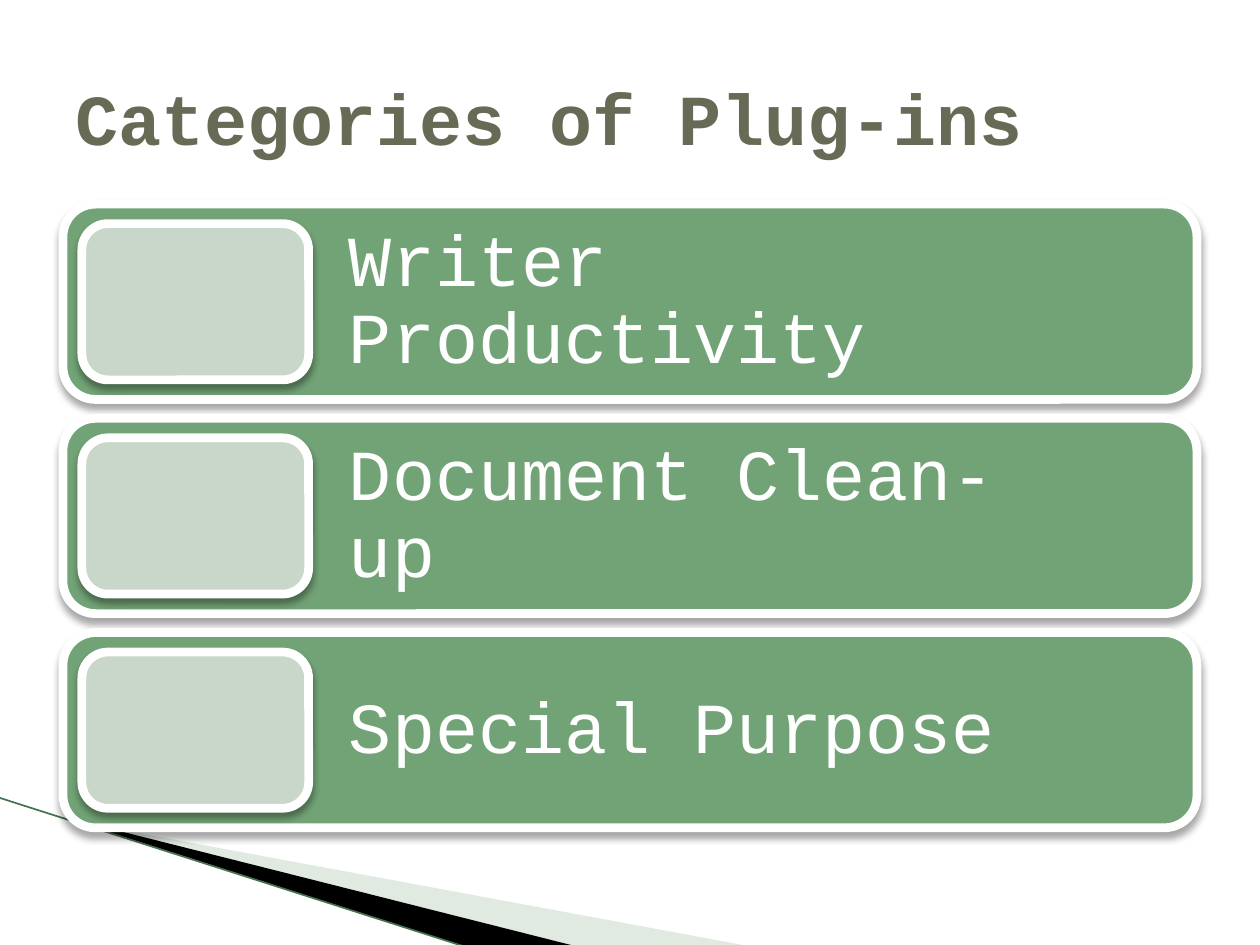
"""Build the slide on the categories of plug-ins."""
import lxml.etree
import pptx
import pptx.dml.color
import pptx.enum.shapes
import pptx.enum.text
import pptx.oxml
import pptx.oxml.ns
import pptx.util
from pptx.util import Inches

qn = pptx.oxml.ns.qn


def color(value):
    return pptx.dml.color.RGBColor.from_string(value)


def write(frame, text, ink, bold=False, spacing=1.0, inset=(0.1, 0.05)):
    frame.word_wrap = True
    frame.auto_size = pptx.enum.text.MSO_AUTO_SIZE.NONE
    frame.vertical_anchor = pptx.enum.text.MSO_ANCHOR.MIDDLE
    frame.margin_left = frame.margin_right = Inches(inset[0])
    frame.margin_top = frame.margin_bottom = Inches(inset[1])
    paragraph = frame.paragraphs[0]
    paragraph.alignment = pptx.enum.text.PP_ALIGN.LEFT
    paragraph.line_spacing = spacing
    run = paragraph.add_run()
    run.text = text
    run.font.name = "Courier New"
    run.font.size = pptx.util.Pt(41)
    run.font.bold = bold
    run.font.color.rgb = color(ink)


deck = pptx.Presentation()
deck.slide_width, deck.slide_height = Inches(10), Inches(7.5)
slide = deck.slides.add_slide(deck.slide_layouts[5])
shapes = slide.shapes

wedges = [
    ("B3CBB5", 40, [(0.55, 6.51), (5.95, 7.51), (4.56, 7.51), (0.55, 6.5)]),
    ("000000", 100, [(0.53, 6.49), (4.57, 7.51), (3.72, 7.52), (0.54, 6.5)]),
]
for fill, opacity, points in wedges:
    corners = [(Inches(x), Inches(y)) for x, y in points]
    builder = shapes.build_freeform(*corners[0])
    builder.add_line_segments(corners[1:], close=True)
    wedge = builder.convert_to_shape()
    wedge.shadow.inherit = False
    wedge.fill.solid()
    wedge.fill.fore_color.rgb = color(fill)
    wedge.line.fill.background()
    if opacity < 100:
        tint = wedge.fill._xPr.find(qn("a:solidFill"))[0]
        lxml.etree.SubElement(tint, qn("a:alpha"), val=str(opacity * 1000))

edge = shapes.add_connector(
    pptx.enum.shapes.MSO_CONNECTOR.STRAIGHT,
    Inches(-0.01), Inches(6.33), Inches(3.71), Inches(7.52))
edge.line.color.rgb = color("47704C")
edge.line.width = pptx.util.Pt(0.95)
lxml.etree.SubElement(edge._element.spPr, qn("a:effectLst"))

categories = ["Writer Productivity", "Document Clean-up", "Special Purpose"]
for row, category in enumerate(categories):
    top = 1.62 + 1.7 * row
    panels = [
        ("72A376", 0.5, top, 9, 1.55),
        ("C9D7CA", 0.65, top + 0.155, 1.8, 1.24),
    ]
    for fill, *place in panels:
        panel = shapes.add_shape(
            pptx.enum.shapes.MSO_SHAPE.ROUNDED_RECTANGLE,
            *[Inches(length) for length in place])
        panel.fill.solid()
        panel.fill.fore_color.rgb = color(fill)
        panel.line.color.rgb = color("FFFFFF")
        panel.line.width = pptx.util.Pt(5)
        panel.shadow.inherit = False
        effects = panel._element.spPr.find(qn("a:effectLst"))
        shadow = lxml.etree.SubElement(
            effects, qn("a:outerShdw"), blurRad=str(pptx.util.Pt(4)),
            dist=str(pptx.util.Pt(3)), dir="5400000", rotWithShape="0")
        shade = lxml.etree.SubElement(shadow, qn("a:srgbClr"), val="000000")
        lxml.etree.SubElement(shade, qn("a:alpha"), val="35000")
    label = shapes.add_textbox(Inches(2.45), Inches(top), Inches(6.3), Inches(1.55))
    write(label.text_frame, category, "FFFFFF", spacing=0.9, inset=(0.32, 0.14))

title = shapes.title
title.left, title.top = Inches(0.5), Inches(0.3)
title.width, title.height = Inches(9), Inches(1.25)
write(title.text_frame, "Categories of Plug-ins", "676A55", bold=True)

deck.save("out.pptx")
